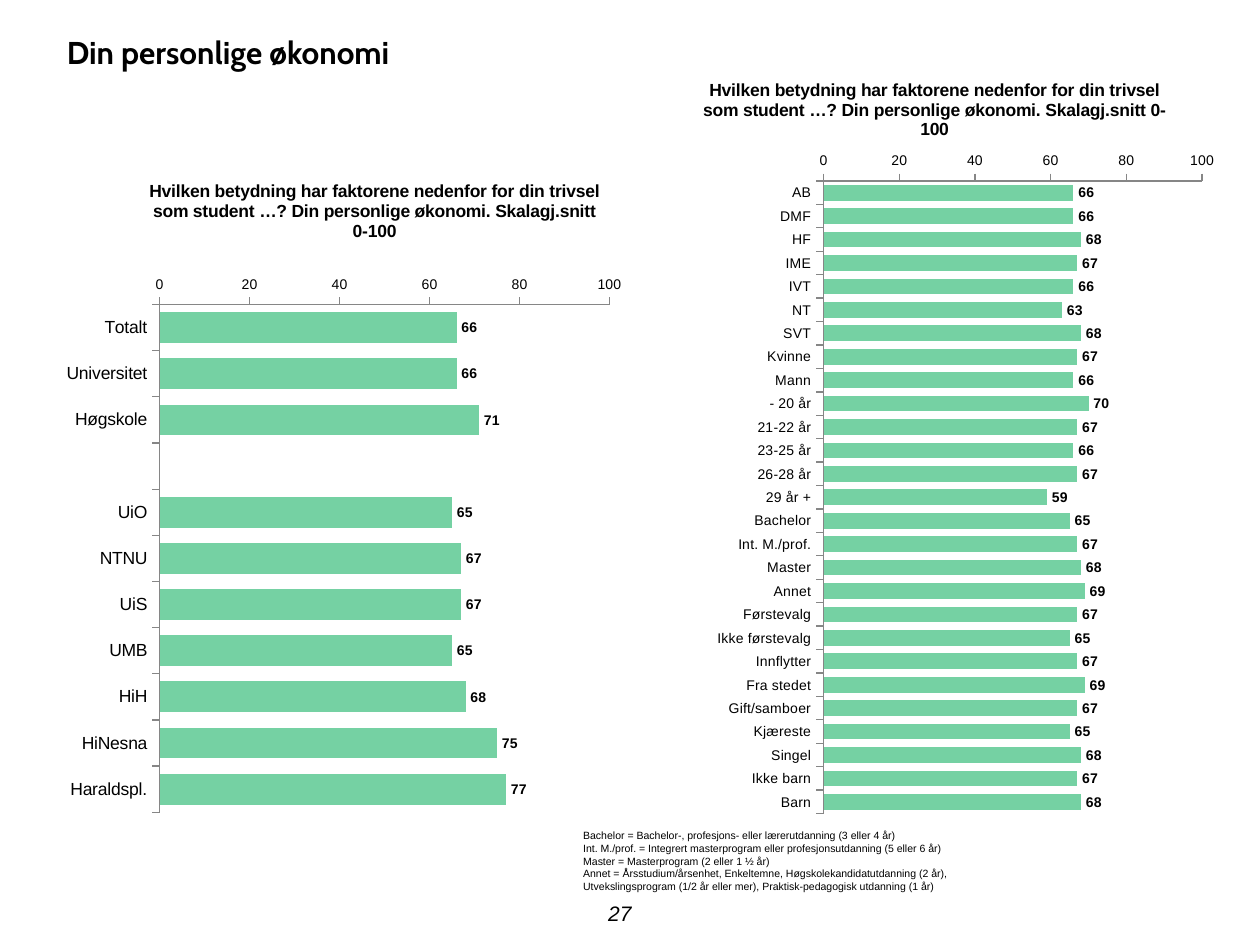
from lxml import etree
from pptx import Presentation
from pptx import util as u
from pptx.chart.data import CategoryChartData
from pptx.dml.color import RGBColor
from pptx.enum import chart as charts, text
from pptx.oxml import ns

WIDTH, HEIGHT = u.Inches(10), u.Inches(7.5)
BLACK, GREEN, GREY = "000000", "75D1A3", "868686"
QUESTION = ("Hvilken betydning har faktorene nedenfor for din trivsel som student …? "
            "Din personlige økonomi. Skalagj.snitt 0-100")

INSTITUTIONS = [("Totalt", 66), ("Universitet", 66), ("Høgskole", 71), ("", None),
                ("UiO", 65), ("NTNU", 67), ("UiS", 67), ("UMB", 65), ("HiH", 68),
                ("HiNesna", 75), ("Haraldspl.", 77)]
GROUPS = [("AB", 66), ("DMF", 66), ("HF", 68), ("IME", 67), ("IVT", 66), ("NT", 63),
          ("SVT", 68), ("Kvinne", 67), ("Mann", 66), ("- 20 år", 70), ("21-22 år", 67),
          ("23-25 år", 66), ("26-28 år", 67), ("29 år +", 59), ("Bachelor", 65),
          ("Int. M./prof.", 67), ("Master", 68), ("Annet", 69), ("Førstevalg", 67),
          ("Ikke førstevalg", 65), ("Innflytter", 67), ("Fra stedet", 69),
          ("Gift/samboer", 67), ("Kjæreste", 65), ("Singel", 68), ("Ikke barn", 67),
          ("Barn", 68)]
NOTES = ["Bachelor = Bachelor-, profesjons- eller lærerutdanning (3 eller 4 år)",
         "Int. M./prof. = Integrert masterprogram eller profesjonsutdanning (5 eller 6 år)",
         "Master = Masterprogram (2 eller 1 ½ år)",
         "Annet = Årsstudium/årsenhet, Enkeltemne, Høgskolekandidatutdanning (2 år), "
         "Utvekslingsprogram (1/2 år eller mer), Praktisk-pedagogisk utdanning (1 år)"]


def colour(code):
    return RGBColor.from_string(code)


def area(left, top, width, height):
    """Turn shares of the slide into a box in slide units."""
    return (int(left * WIDTH), int(top * HEIGHT), int(width * WIDTH), int(height * HEIGHT))


def style(font, size, name="Arial", bold=False, italic=False):
    font.size, font.name = u.Pt(size), name
    font.bold, font.italic = bold, italic
    font.color.rgb = colour(BLACK)


def set_layout(parent, target=None, **shares):
    """Place a chart part by shares of the chart's size."""
    layout = parent.find(ns.qn("c:layout"))
    if layout is None:
        layout = etree.Element(ns.qn("c:layout"))
        parent.insert(0, layout)
    for child in list(layout):
        layout.remove(child)
    manual = etree.SubElement(layout, ns.qn("c:manualLayout"))
    settings = {"layoutTarget": target} if target else {}
    settings.update(xMode="edge", yMode="edge", **shares)
    for tag, value in settings.items():
        etree.SubElement(manual, ns.qn("c:" + tag)).set("val", str(value))


def format_axis(axis, size):
    axis.has_major_gridlines = False
    axis.major_tick_mark = charts.XL_TICK_MARK.OUTSIDE
    axis.minor_tick_mark = charts.XL_TICK_MARK.NONE
    axis.format.line.color.rgb = colour(GREY)
    axis.format.line.width = u.Pt(0.75)
    style(axis.tick_labels.font, size)


def add_score_chart(page, box, rows, label_size, title_at, plot):
    data = CategoryChartData(number_format="0")
    data.categories = [name for name, _ in rows]
    data.add_series("Skalagj.snitt", [score for _, score in rows])
    chart = page.shapes.add_chart(charts.XL_CHART_TYPE.BAR_CLUSTERED, *box, data).chart
    chart.has_legend = False
    style(chart.font, 18)

    title = chart.chart_title
    title.text_frame.text = QUESTION
    style(title.text_frame.paragraphs[0].font, 10, bold=True)
    title.include_in_layout = True
    title_element = title._element
    title_element.find(ns.qn("c:overlay")).set("val", "1")
    set_layout(title_element, x=title_at[0], y=title_at[1])
    set_layout(chart._chartSpace.chart.plotArea, "inner", **dict(zip("xywh", plot)))

    format_axis(chart.category_axis, label_size)
    chart.category_axis.reverse_order = True
    scale = chart.value_axis
    format_axis(scale, 8)
    scale.minimum_scale, scale.maximum_scale, scale.major_unit = 0, 100, 20
    scale.tick_labels.number_format = "0"
    scale.tick_labels.number_format_is_linked = False

    bars = chart.plots[0]
    bars.gap_width, bars.vary_by_categories = 50, False
    bars.series[0].format.fill.solid()
    bars.series[0].format.fill.fore_color.rgb = colour(GREEN)
    bars.has_data_labels = True
    labels = bars.data_labels
    labels.show_value = True
    labels.position = charts.XL_LABEL_POSITION.OUTSIDE_END
    labels.number_format, labels.number_format_is_linked = "0", False
    style(labels.font, 8, bold=True)


def add_heading(page, box, wording):
    title = page.shapes.title
    title.left, title.top, title.width, title.height = box
    frame = title.text_frame
    frame.text = wording
    frame.vertical_anchor = text.MSO_ANCHOR.TOP
    frame.auto_size = text.MSO_AUTO_SIZE.NONE
    frame.paragraphs[0].alignment = text.PP_ALIGN.LEFT
    style(frame.paragraphs[0].font, 18, "Cabin", bold=True)


def add_lines(page, box, lines, size, align=text.PP_ALIGN.LEFT, italic=False, wrap=True):
    frame = page.shapes.add_textbox(*box).text_frame
    frame.word_wrap = wrap
    if not wrap:
        frame.vertical_anchor = text.MSO_ANCHOR.MIDDLE
    for number, line in enumerate(lines):
        para = frame.add_paragraph() if number else frame.paragraphs[0]
        para.text, para.alignment = line, align
        style(para.font, size, italic=italic)


def main():
    deck = Presentation()
    deck.slide_width, deck.slide_height = WIDTH, HEIGHT
    page = deck.slides.add_slide(deck.slide_layouts[5])
    add_heading(page, area(0.043, 0.028, 0.917, 0.053), "Din personlige økonomi")
    add_score_chart(page, area(0.043, 0.18, 0.465, 0.708), INSTITUTIONS, 10,
                    (0.157, 0.01), (0.18, 0.201, 0.768, 0.759))
    add_score_chart(page, area(0.5, 0.048, 0.479, 0.84), GROUPS, 8,
                    (0.116, 0.038), (0.321, 0.171, 0.627, 0.797))
    add_lines(page, area(0.453, 0.871, 0.315, 0.081), NOTES, 6)
    add_lines(page, area(0.464, 0.944, 0.056, 0.044), ["27"], 12,
              text.PP_ALIGN.CENTER, italic=True, wrap=False)
    deck.save("out.pptx")


if __name__ == "__main__":
    main()
